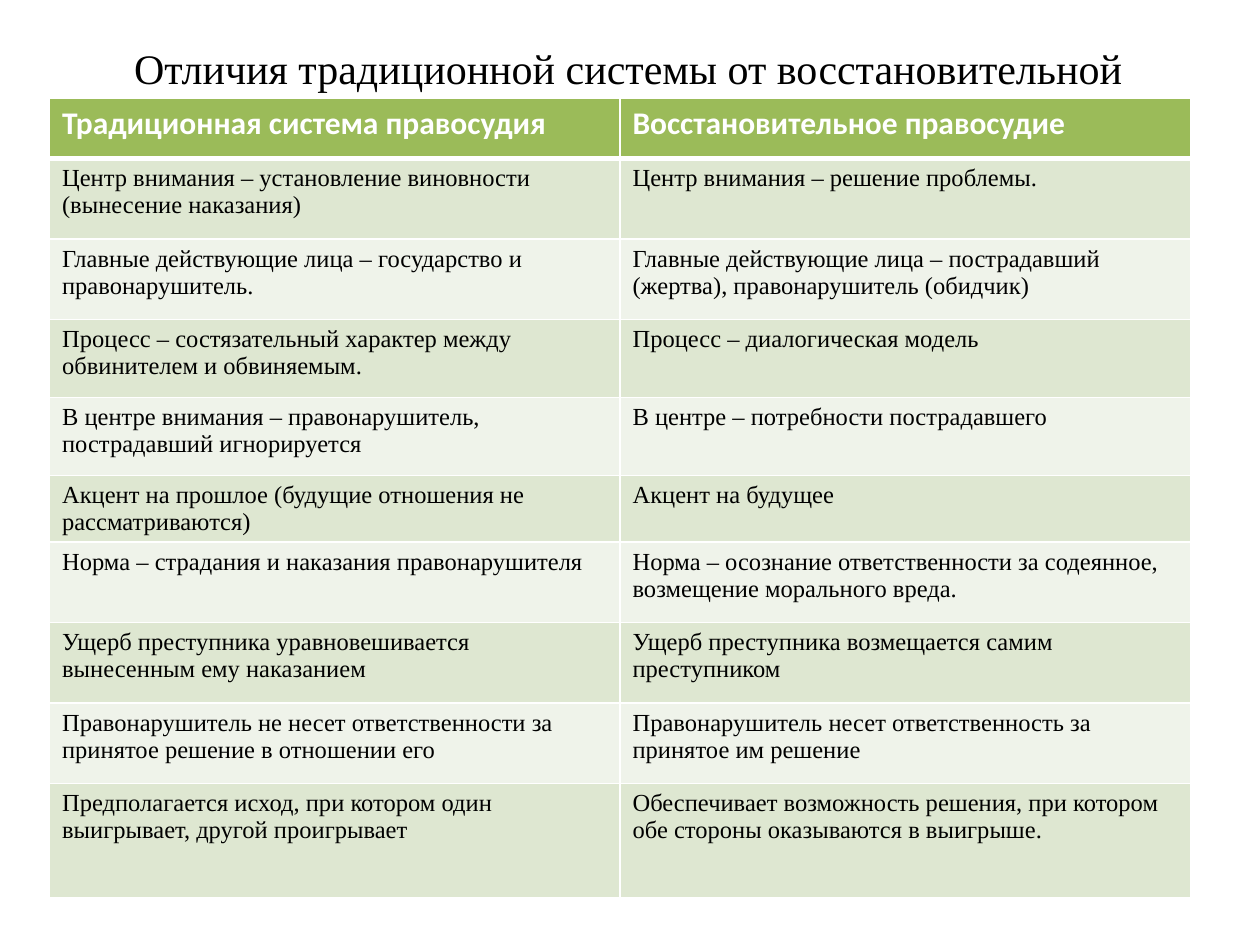
from lxml.etree import SubElement
from pptx import Presentation
from pptx.dml.color import RGBColor
from pptx.enum.text import MSO_ANCHOR as Anchor, MSO_AUTO_SIZE as AutoSize, PP_ALIGN as Align
from pptx.oxml.ns import qn
from pptx.util import Pt

TITLE = "Отличия традиционной системы от восстановительной"
HEADER = ("Традиционная система правосудия", "Восстановительное правосудие")
# Row height, traditional system, restorative system
ROWS = [
    (46, "Центр внимания – установление виновности (вынесение наказания)",
     "Центр внимания – решение проблемы."),
    (46, "Главные действующие лица – государство и правонарушитель.",
     "Главные действующие лица – пострадавший (жертва), правонарушитель (обидчик)"),
    (44.5, "Процесс – состязательный характер между обвинителем и обвиняемым.",
     "Процесс – диалогическая модель"),
    (44.5, "В центре внимания – правонарушитель, пострадавший игнорируется",
     "В центре – потребности пострадавшего"),
    (29.5, "Акцент на прошлое (будущие отношения не рассматриваются)",
     "Акцент на будущее"),
    (46, "Норма – страдания и наказания правонарушителя",
     "Норма – осознание ответственности за содеянное, возмещение морального вреда."),
    (46, "Ущерб преступника уравновешивается вынесенным ему наказанием",
     "Ущерб преступника возмещается самим преступником"),
    (46, "Правонарушитель не несет ответственности за принятое решение в отношении его",
     "Правонарушитель несет ответственность за принятое им решение"),
    (65.5, "Предполагается исход, при котором один выигрывает, другой проигрывает",
     "Обеспечивает возможность решения, при котором обе стороны оказываются в выигрыше."),
]


def color(value):
    return RGBColor.from_string(value)


class Builder:
    serif, sans = "Times New Roman", "Calibri"
    black, white = "000000", "FFFFFF"
    header_fill = "9BBB59"
    band_fills = ("DEE7D1", "EFF3EA")

    def __init__(self, page):
        self.page = page

    def format_text(self, para, name, size, shade, bold=False):
        font = para.font
        font.name, font.size, font.bold = name, Pt(size), bold
        font.color.rgb = color(shade)

    def title(self, text, left, top, width, height):
        box = self.page.shapes.title
        box.left, box.top, box.width, box.height = map(Pt, (left, top, width, height))
        frame = box.text_frame
        frame.text = text
        frame.auto_size = AutoSize.NONE
        frame.vertical_anchor = Anchor.MIDDLE
        para = frame.paragraphs[0]
        para.alignment = Align.CENTER
        self.format_text(para, self.serif, 24, self.black)

    def borders(self, cell, bottom, top):
        properties = cell._tc.get_or_add_tcPr()
        for side, width in (("L", 1), ("R", 1), ("T", top), ("B", bottom)):
            line = SubElement(properties, qn(f"a:ln{side}"), w=str(Pt(width)))
            fill = SubElement(line, qn("a:solidFill"))
            SubElement(fill, qn("a:srgbClr"), val=self.white)

    def cell(self, cell, text, row):
        is_header = row == 0
        # The thick rule lies between the header and the first row
        self.borders(cell, bottom=3 if is_header else 1, top=3 if row == 1 else 1)
        cell.fill.solid()
        fill = self.header_fill if is_header else self.band_fills[(row - 1) % 2]
        cell.fill.fore_color.rgb = color(fill)
        cell.text = text
        para = cell.text_frame.paragraphs[0]
        if is_header:
            self.format_text(para, self.sans, 18, self.white, bold=True)
        else:
            self.format_text(para, self.serif, 14, self.black)

    def table(self, rows, left, top, column_width):
        columns = len(rows[0]) - 1
        height = sum(row[0] for row in rows)
        table = self.page.shapes.add_table(
            len(rows), columns, Pt(left), Pt(top),
            Pt(column_width * columns), Pt(height)).table
        for column in table.columns:
            column.width = Pt(column_width)
        for index, (row_height, *texts) in enumerate(rows):
            table.rows[index].height = Pt(row_height)
            for column, text in enumerate(texts):
                self.cell(table.cell(index, column), text, index)


def main():
    deck = Presentation()
    deck.slide_width, deck.slide_height = Pt(720), Pt(540)
    builder = Builder(deck.slides.add_slide(deck.slide_layouts[5]))

    # Heading
    builder.title(TITLE, 34, 21.5, 650, 34.5)

    # Comparison of the two systems
    builder.table([(34.5, *HEADER)] + ROWS, 28.3, 56.2, 326)

    deck.save("out.pptx")


if __name__ == "__main__":
    main()
